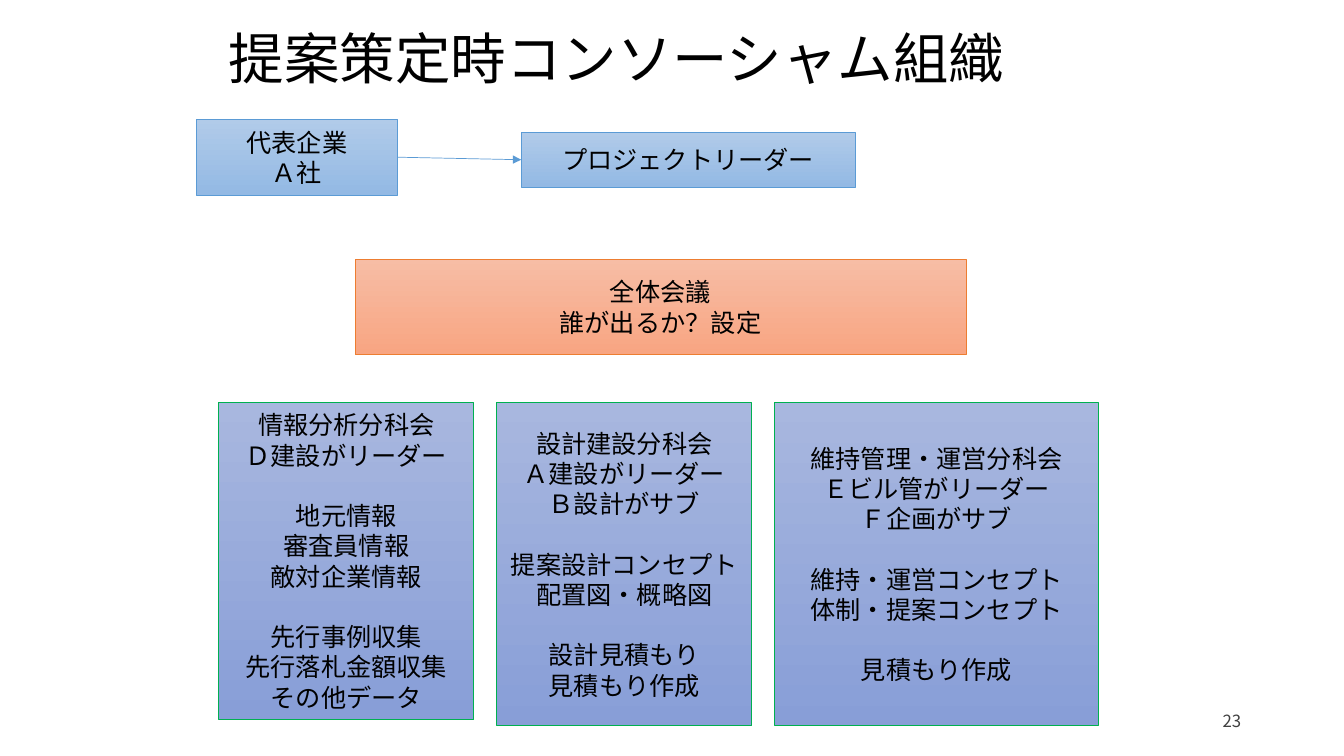
from lxml import etree
from pptx import Presentation
from pptx.dml.color import RGBColor
from pptx.enum.shapes import MSO_CONNECTOR, MSO_SHAPE
from pptx.enum.text import MSO_ANCHOR, PP_ALIGN
from pptx.oxml.ns import qn
from pptx.util import Inches, Pt

RECTANGLE = MSO_SHAPE.RECTANGLE
STRAIGHT = MSO_CONNECTOR.STRAIGHT
MIDDLE = MSO_ANCHOR.MIDDLE
LEFT, CENTER, RIGHT = PP_ALIGN.LEFT, PP_ALIGN.CENTER, PP_ALIGN.RIGHT
RIGHT_SIDE, LEFT_SIDE = 3, 1  # connection sites of a rectangle
TITLE_ONLY = 5

BODY_FONT, TITLE_FONT = "League Spartan", "Noto Sans CJK JP"
BLACK, GREY = "000000", "404040"
LINE_BLUE, LINE_GREEN, LINE_ORANGE = "5B9BD5", "00B050", "ED7D31"
BLUE = ("B1CBE9", "93B9E4")
INDIGO = ("A8B7DF", "889ED7")
ORANGE = ("F7BDA5", "F8A582")


def color(value):
    return RGBColor.from_string(value)


class SlideBuilder:
    """Places elements by percentages of the slide's width and height."""

    def __init__(self, presentation):
        self.width = presentation.slide_width
        self.height = presentation.slide_height
        self.slide = presentation.slides.add_slide(presentation.slide_layouts[TITLE_ONLY])

    def area(self, left, top, width, height):
        return (int(self.width * left / 100), int(self.height * top / 100),
                int(self.width * width / 100), int(self.height * height / 100))

    def set_text(self, shape, groups, size=18, font=BODY_FONT, ink=BLACK, align=CENTER):
        """Fill a shape with groups of lines, one line's height apart."""
        frame = shape.text_frame
        frame.word_wrap = True
        frame.vertical_anchor = MIDDLE
        frame.text = "\n".join(line for group in groups for line in group)
        starts = {sum(map(len, groups[:index])) for index in range(1, len(groups))}
        for index, paragraph in enumerate(frame.paragraphs):
            paragraph.alignment = align
            paragraph.font.size = Pt(size)
            paragraph.font.name = font
            paragraph.font.color.rgb = color(ink)
            if index in starts:
                paragraph.space_before = Pt(1.2 * size)
        # Use the same typeface for East Asian text
        for latin in list(shape._element.iter(qn("a:latin"))):
            east_asian = etree.Element(qn("a:ea"), typeface=font)
            latin.addnext(east_asian)

    def title(self, text, *area):
        shape = self.slide.shapes.title
        shape.left, shape.top, shape.width, shape.height = self.area(*area)
        self.set_text(shape, [[text]], 39.6, TITLE_FONT, align=LEFT)

    def box(self, groups, gradient, line, *area):
        shape = self.slide.shapes.add_shape(RECTANGLE, *self.area(*area))
        shape.shadow.inherit = False
        shape.fill.gradient()
        shape.fill.gradient_angle = 270
        for stop, value in zip(shape.fill.gradient_stops, gradient):
            stop.color.rgb = color(value)
        shape.line.color.rgb = color(line)
        shape.line.width = Pt(0.5)
        self.set_text(shape, groups)
        return shape

    def arrow(self, source, target):
        connector = self.slide.shapes.add_connector(STRAIGHT, 0, 0, 0, 0)
        connector.begin_connect(source, RIGHT_SIDE)
        connector.end_connect(target, LEFT_SIDE)
        connector.line.color.rgb = color(LINE_BLUE)
        connector.line.width = Pt(0.5)
        properties = connector._element.spPr
        etree.SubElement(properties.find(qn("a:ln")), qn("a:tailEnd"), type="triangle")
        etree.SubElement(properties, qn("a:effectLst"))

    def page_number(self, text, *area):
        shape = self.slide.shapes.add_textbox(*self.area(*area))
        self.set_text(shape, [[text]], 12, TITLE_FONT, GREY, RIGHT)


# Subcommittees: width, height, groups of lines
SUBCOMMITTEES = [
    (18.98, 42, [
        ["情報分析分科会", "Ｄ建設がリーダー"],
        ["地元情報", "審査員情報", "敵対企業情報"],
        ["先行事例収集", "先行落札金額収集", "その他データ"]]),
    (18.98, 42.8, [
        ["設計建設分科会", "Ａ建設がリーダー", "Ｂ設計がサブ"],
        ["提案設計コンセプト", "配置図・概略図"],
        ["設計見積もり", "見積もり作成"]]),
    (24.08, 42.8, [
        ["維持管理・運営分科会", "Ｅビル管がリーダー", "Ｆ企画がサブ"],
        ["維持・運営コンセプト", "体制・提案コンセプト"],
        ["見積もり作成"]]),
]
MARGIN, GAP = 16.28, 1.7


def main():
    presentation = Presentation()
    presentation.slide_width = Inches(13.33)
    presentation.slide_height = Inches(7.5)
    builder = SlideBuilder(presentation)

    builder.title("提案策定時コンソーシャム組織", MARGIN, 4, 67.52, 7.2)

    # Lead company and project leader
    leader = builder.box([["プロジェクトリーダー"]], BLUE, LINE_BLUE, 38.78, 17.53, 24.83, 7.2)
    company = builder.box([["代表企業", "Ａ社"]], BLUE, LINE_BLUE, 14.59, 15.73, 15, 10.13)
    builder.arrow(company, leader)

    # General meeting
    builder.box([["全体会議", "誰が出るか？設定"]], ORANGE, LINE_ORANGE, 26.41, 34.27, 45.46, 12.67)

    # Row of subcommittees
    left = MARGIN
    for width, height, groups in SUBCOMMITTEES:
        builder.box(groups, INDIGO, LINE_GREEN, left, 53.2, width, height)
        left += width + GAP

    builder.page_number("23", 66.24, 92.67, 26.86, 5.33)
    presentation.save("out.pptx")


if __name__ == "__main__":
    main()
